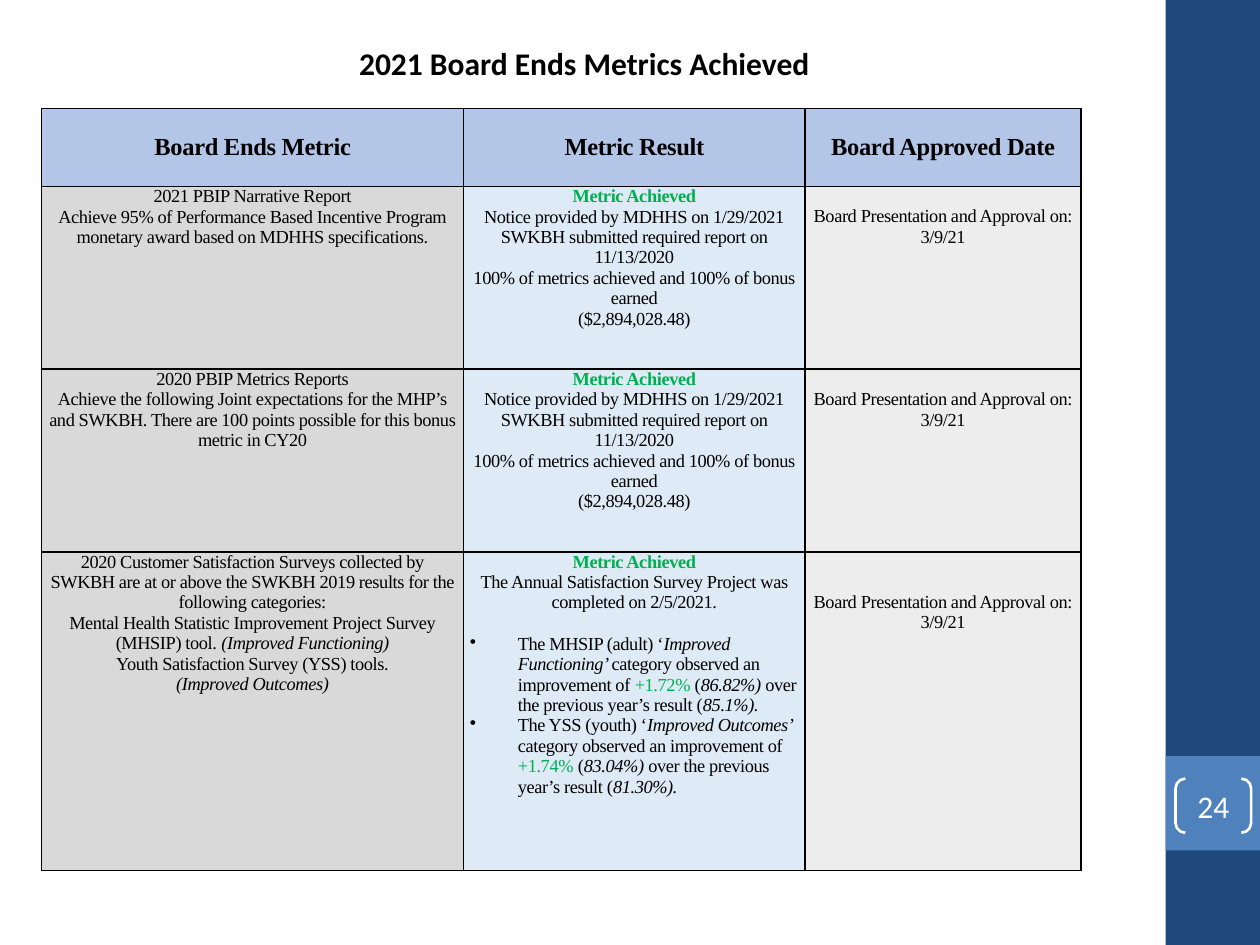
"""Build the slide listing the 2021 board ends metrics achieved."""
from lxml.etree import SubElement
from pptx import Presentation
from pptx.dml.color import RGBColor
from pptx.enum.shapes import MSO_SHAPE as SHAPE
from pptx.enum.text import MSO_ANCHOR as ANCHOR, PP_ALIGN as ALIGN
from pptx.oxml.ns import qn
from pptx.util import Inches, Pt

TITLE = "2021 Board Ends Metrics Achieved"
PAGE = "24"
HEADERS = ["Board Ends Metric", "Metric Result", "Board Approved Date"]
ACHIEVED = [("Metric Achieved", "green bold")]
APPROVED = [["Board Presentation and Approval on: 3/9/21"]]
BONUS = [
    ACHIEVED,
    ["Notice provided by MDHHS on 1/29/2021"],
    ["SWKBH submitted required report on 11/13/2020"],
    ["100% of metrics achieved and 100% of bonus earned"],
    ["($2,894,028.48)"],
]
SURVEY = [ACHIEVED, ["The Annual Satisfaction Survey Project was completed on 2/5/2021."]]
SURVEY_BULLETS = [
    ["The MHSIP (adult) ‘", ("Improved Functioning’ ", "italic"),
     "category observed an improvement of ", ("+1.72% ", "green"), "(",
     ("86.82%) ", "italic"), "over the previous year’s result (", ("85.1%).", "italic")],
    ["The YSS (youth) ‘", ("Improved Outcomes’ ", "italic"),
     "category observed an improvement of ", ("+1.74% ", "green"), "(",
     ("83.04%)", "italic"), " over the previous year’s result (", ("81.30%).", "italic")],
]
ROWS = [
    {"metric": [
        ["2021 PBIP Narrative Report"],
        ["Achieve 95% of Performance Based Incentive Program monetary award "
         "based on MDHHS specifications."]],
     "result": BONUS, "bullets": [], "drop": 1},
    {"metric": [
        ["2020 PBIP Metrics Reports"],
        ["Achieve the following Joint expectations for the MHP’s and SWKBH. "
         "There are 100 points possible for this bonus metric in CY20"]],
     "result": BONUS, "bullets": [], "drop": 1},
    {"metric": [
        ["2020 Customer Satisfaction Surveys collected by SWKBH are at or above "
         "the SWKBH 2019 results for the following categories:"],
        ["Mental Health Statistic Improvement Project Survey (MHSIP) tool. ",
         ("(Improved Functioning)", "italic")],
        ["Youth Satisfaction Survey (YSS) tools."],
        [("(Improved Outcomes)", "italic")]],
     "result": SURVEY, "bullets": SURVEY_BULLETS, "drop": 2},
]
COL_WIDTHS = [3.35, 2.71, 2.19]
ROW_HEIGHTS = [0.62, 1.45, 1.45, 2.53]
HEADER_FILL = "B4C6E7"
COL_FILLS = ["D9D9D9", "DEEAF6", "EDEDED"]
SERIF, SANS = "Times New Roman", "Calibri"
LINE = 0.16


def color(value):
    """Turn a hex string into a colour."""
    return RGBColor.from_string(value)


def add_run(p, text, size, font=SERIF, fill="000000", bold=False, italic=False):
    """Append one formatted run to a paragraph."""
    r = p.add_run()
    r.text = text
    f = r.font
    f.name, f.size, f.bold, f.italic = font, Pt(size), bold, italic
    f.color.rgb = color(fill)
    return r


def add_shape(s, kind, box, fill=None):
    """Add a preset shape without outline or shadow."""
    sp = s.shapes.add_shape(kind, *map(Inches, box))
    sp.shadow.inherit = False
    sp.line.fill.background()
    if fill:
        sp.fill.solid()
        sp.fill.fore_color.rgb = color(fill)
    else:
        sp.fill.background()
    return sp


def style_cell(cell, fill):
    """Set the margins, black borders and fill of a cell."""
    cell.margin_left = cell.margin_right = Inches(0.05)
    cell.margin_top = cell.margin_bottom = 0
    tc_pr = cell._tc.get_or_add_tcPr()
    for side in ("lnL", "lnR", "lnT", "lnB"):
        ln = SubElement(tc_pr, qn(f"a:{side}"), w=str(Pt(1)))
        SubElement(SubElement(ln, qn("a:solidFill")), qn("a:srgbClr"), val="000000")
    cell.fill.solid()
    cell.fill.fore_color.rgb = color(fill)


def write_cell(cell, lines, bullets=(), size=10.5, bold=False):
    """Write centred lines, then a bulleted list."""
    tf = cell.text_frame
    for i, line in enumerate([*lines, *bullets]):
        p = tf.add_paragraph() if i else tf.paragraphs[0]
        p.alignment = ALIGN.CENTER
        if i >= len(lines):
            p.alignment = ALIGN.LEFT
            p.space_before = Pt(12 if i == len(lines) else 0)
            p_pr = p._p.get_or_add_pPr()
            p_pr.set("marL", str(Inches(0.38)))
            p_pr.set("indent", str(-Inches(0.38)))
            SubElement(p_pr, qn("a:buChar"), char="•")
        for part in line:
            text, style = (part, "") if isinstance(part, str) else part
            r = add_run(p, text, size, fill="00B050" if "green" in style else "000000",
                        bold=bold or "bold" in style, italic="italic" in style)
            r.font._element.set("spc", "-20")


def add_sidebar(s):
    """Add the side band with the bracketed page number."""
    add_shape(s, SHAPE.RECTANGLE, (9.25, 0, 0.75, 7.5), "1F497D")
    add_shape(s, SHAPE.RECTANGLE, (9.25, 6, 0.75, 0.75), "4F81BD")
    sp = add_shape(s, SHAPE.DOUBLE_BRACKET, (9.33, 6.18, 0.6, 0.43))
    sp.adjustments[0] = 0.18
    sp.line.color.rgb = color("FFFFFF")
    sp.line.width = Pt(1.5)
    tf = sp.text_frame
    tf.margin_left = tf.margin_right = tf.margin_top = tf.margin_bottom = 0
    tf.vertical_anchor = ANCHOR.MIDDLE
    p = tf.paragraphs[0]
    p.alignment = ALIGN.CENTER
    add_run(p, PAGE, 18, SANS, "FFFFFF")


def add_metrics(s):
    """Add the table of metrics, results and approval dates."""
    box = (0.33, 0.86, sum(COL_WIDTHS), sum(ROW_HEIGHTS))
    table = s.shapes.add_table(len(ROW_HEIGHTS), len(COL_WIDTHS), *map(Inches, box)).table
    table.first_row = table.horz_banding = False
    for col, width in zip(table.columns, COL_WIDTHS):
        col.width = Inches(width)
    for row, height in zip(table.rows, ROW_HEIGHTS):
        row.height = Inches(height)
    for cell, text in zip(table.rows[0].cells, HEADERS):
        style_cell(cell, HEADER_FILL)
        cell.vertical_anchor = ANCHOR.MIDDLE
        write_cell(cell, [[text]], size=14, bold=True)
    for i, row in enumerate(ROWS, 1):
        cells = list(table.rows[i].cells)
        for cell, fill in zip(cells, COL_FILLS):
            style_cell(cell, fill)
        metric, result, date = cells
        write_cell(metric, row["metric"])
        write_cell(result, row["result"], row["bullets"])
        write_cell(date, APPROVED)
        date.margin_top = Inches(row["drop"] * LINE)


def add_title(s):
    """Place and fill the title placeholder."""
    sp = s.shapes.title
    sp.left, sp.top, sp.width, sp.height = map(Inches, (2.75, 0.3, 3.81, 0.4))
    tf = sp.text_frame
    tf.word_wrap = False
    tf.vertical_anchor = ANCHOR.TOP
    p = tf.paragraphs[0]
    p.alignment = ALIGN.LEFT
    add_run(p, TITLE, 18, SANS, bold=True)


def main():
    """Build and save the slide."""
    prs = Presentation()
    prs.slide_width, prs.slide_height = Inches(10), Inches(7.5)
    s = prs.slides.add_slide(prs.slide_layouts[5])
    add_sidebar(s)
    add_metrics(s)
    add_title(s)
    prs.save("out.pptx")


if __name__ == "__main__":
    main()
